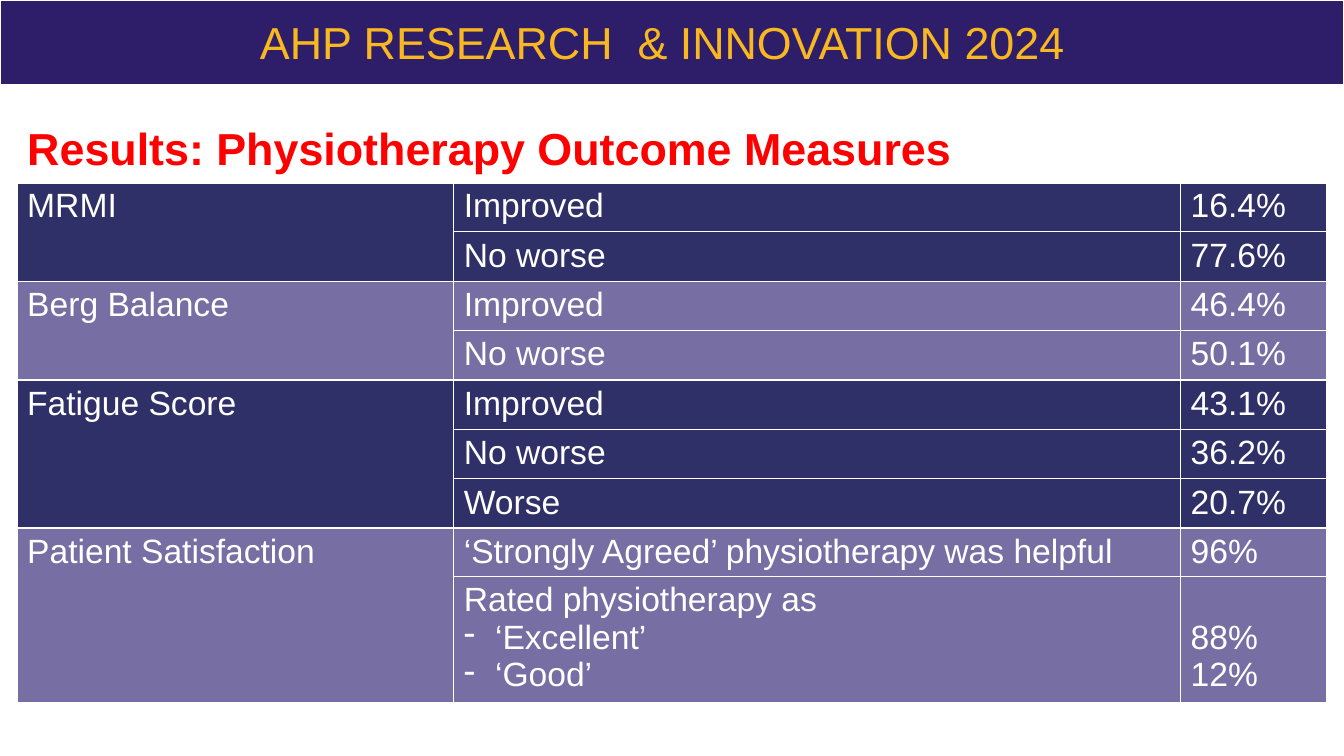
from lxml import etree
from pptx import Presentation
from pptx.dml.color import RGBColor
from pptx.oxml.ns import qn
from pptx.enum.shapes import MSO_SHAPE
from pptx.util import Inches, Pt

RECTANGLE = MSO_SHAPE.RECTANGLE
FONT = "Arial"
COLOURS = {
    "white": "FFFFFF",
    "banner": "2E1E69",
    "gold": "F9B820",
    "heading": "FF0000",
    "dark": "303068",
    "light": "776EA3",
}
COLUMN_WIDTHS = [4.33, 7.21, 1.45]
ROW_HEIGHTS = [0.62] + [0.49] * 7 + [0.48, 1.25]
LINE_HEIGHT = 0.37
HANGING = 0.31

MEASURES = [
    ("MRMI", [("Improved", "16.4%"), ("No worse", "77.6%")]),
    ("Berg Balance", [("Improved", "46.4%"), ("No worse", "50.1%")]),
    ("Fatigue Score", [("Improved", "43.1%"), ("No worse", "36.2%"), ("Worse", "20.7%")]),
    ("Patient Satisfaction", [
        ("‘Strongly Agreed’ physiotherapy was helpful", "96%"),
        ("Rated physiotherapy as\n‘Excellent’\n‘Good’", "88%\n12%"),
    ]),
]


def write(frame, text, size, colour, bold=False):
    frame.text = text
    for paragraph in frame.paragraphs:
        for run in paragraph.runs:
            run.font.name = FONT
            run.font.size = Pt(size)
            run.font.bold = bold
            run.font.color.rgb = RGBColor.from_string(COLOURS[colour])


def paint(cell, colour, top=1, bottom=1):
    properties = cell._tc.get_or_add_tcPr()
    for side, width in (("lnL", 1), ("lnR", 1), ("lnT", top), ("lnB", bottom)):
        border = etree.SubElement(properties, qn(f"a:{side}"), w=str(Pt(width)))
        fill = etree.SubElement(border, qn("a:solidFill"))
        etree.SubElement(fill, qn("a:srgbClr"), val=COLOURS["white"])
    cell.fill.solid()
    cell.fill.fore_color.rgb = RGBColor.from_string(COLOURS[colour])


deck = Presentation()
deck.slide_width, deck.slide_height = Inches(13.33), Inches(7.5)
slide = deck.slides.add_slide(deck.slide_layouts[6])

results = slide.shapes.add_table(
    len(ROW_HEIGHTS), len(COLUMN_WIDTHS), Inches(0.17), Inches(1.19),
    Inches(sum(COLUMN_WIDTHS)), Inches(sum(ROW_HEIGHTS))).table
for column, width in zip(results.columns, COLUMN_WIDTHS):
    column.width = Inches(width)
for row, height in zip(results.rows, ROW_HEIGHTS):
    row.height = Inches(height)

for column in range(len(COLUMN_WIDTHS)):
    paint(results.cell(0, column), "white", bottom=3)
heading = results.cell(0, 0)
heading.merge(results.cell(0, 2))
write(heading.text_frame, "Results: Physiotherapy Outcome Measures", 32, "heading", True)

first = 1
for index, (measure, outcomes) in enumerate(MEASURES):
    band = ("dark", "light")[index % 2]
    for row, (outcome, share) in enumerate(outcomes, first):
        for column, text in enumerate((measure if row == first else "", outcome, share)):
            cell = results.cell(row, column)
            paint(cell, band, top=3 if row == 1 else 1)
            if text:
                write(cell.text_frame, text, 24, "white")
    last = first + len(outcomes) - 1
    results.cell(first, 0).merge(results.cell(last, 0))
    first = last + 1

ratings, rating_shares = results.cell(last, 1), results.cell(last, 2)
rating_shares.margin_top = Inches(0.05 + LINE_HEIGHT)
for rating in ratings.text_frame.paragraphs[1:]:
    properties = rating._p.get_or_add_pPr()
    properties.set("marL", str(Inches(HANGING)))
    properties.set("indent", str(Inches(-HANGING)))
    etree.SubElement(properties, qn("a:buChar"), char="-")

banner = slide.shapes.add_shape(RECTANGLE, 0, 0, deck.slide_width, Inches(0.84))
banner.shadow.inherit = False
banner.fill.solid()
banner.fill.fore_color.rgb = RGBColor.from_string(COLOURS["banner"])
banner.line.color.rgb = RGBColor.from_string(COLOURS["white"])
banner.line.width = Pt(1.5)

event = slide.shapes.add_textbox(Inches(2.48), Inches(0.1), Inches(8.37), Inches(0.64))
event.text_frame.word_wrap = True
write(event.text_frame, "AHP RESEARCH  & INNOVATION 2024", 32, "gold")

deck.save("out.pptx")
